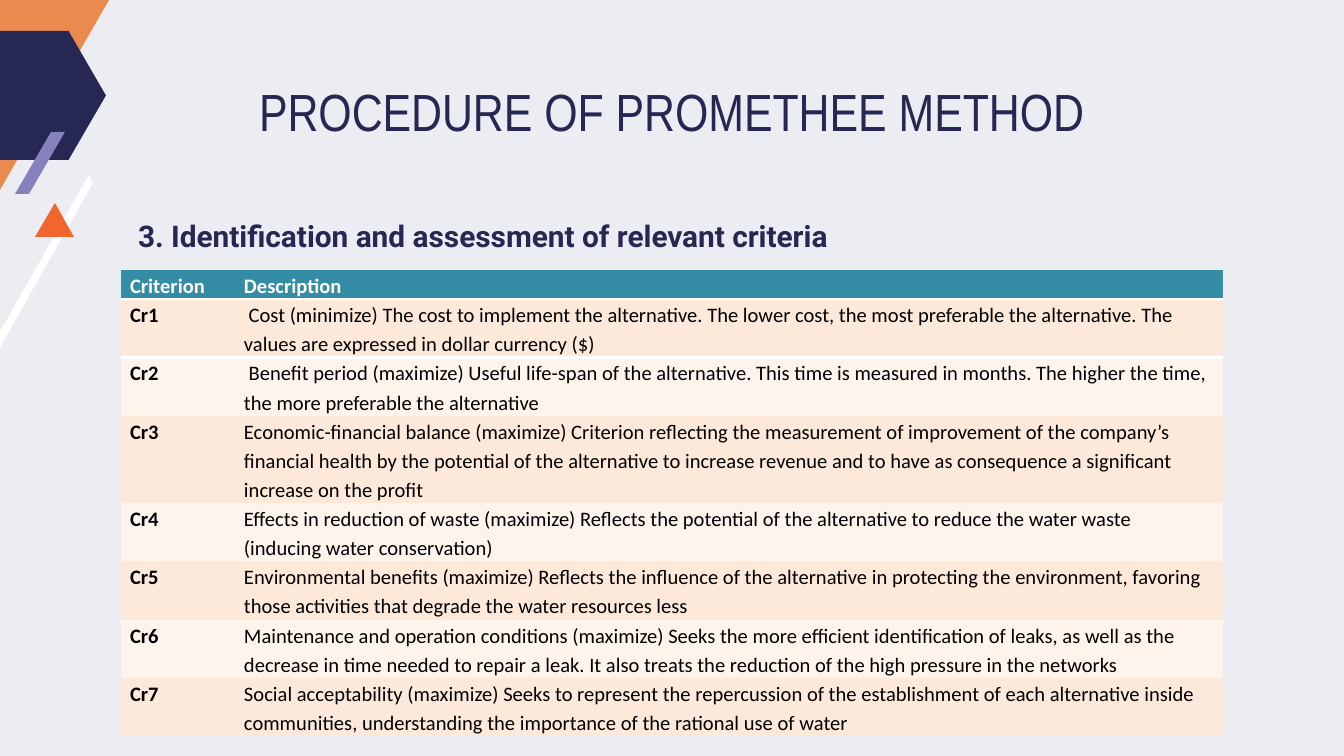
from lxml import etree
from pptx import Presentation
from pptx import util as u
from pptx.dml.color import RGBColor
from pptx.enum import shapes, text
from pptx.oxml import ns

SCALE = 914400 / 134.4
NAVY, WHITE, BLACK = "272753", "FFFFFF", "000000"
TEAL, PEACH, CREAM = "348DA5", "FDE9D9", "FEF4EC"
PLAIN = "{2D5ABB26-0587-4C30-8999-92F81FD0307C}"
LINE = 29

ROWS = [
    (1, "Criterion", "Description"),
    (2, "Cr1", " Cost (minimize) The cost to implement the alternative. The lower cost, "
     "the most preferable the alternative. The values are expressed in dollar currency ($)"),
    (2, "Cr2", " Benefit period (maximize) Useful life-span of the alternative. This time is "
     "measured in months. The higher the time, the more preferable the alternative"),
    (3, "Cr3", "Economic-financial balance (maximize) Criterion reflecting the measurement of "
     "improvement of the company’s financial health by the potential of the alternative to "
     "increase revenue and to have as consequence a significant increase on the profit"),
    (2, "Cr4", "Effects in reduction of waste (maximize) Reflects the potential of the "
     "alternative to reduce the water waste (inducing water conservation)"),
    (2, "Cr5", "Environmental benefits (maximize) Reflects the influence of the alternative in "
     "protecting the environment, favoring those activities that degrade the water resources less"),
    (2, "Cr6", "Maintenance and operation conditions (maximize) Seeks the more efficient "
     "identification of leaks, as well as the decrease in time needed to repair a leak. It also "
     "treats the reduction of the high pressure in the networks"),
    (2, "Cr7", "Social acceptability (maximize) Seeks to represent the repercussion of the "
     "establishment of each alternative inside communities, understanding the importance of the "
     "rational use of water"),
]


def px(n):
    return u.Emu(round(n * SCALE))


def paint(fill, color):
    fill.solid()
    fill.fore_color.rgb = RGBColor.from_string(color)


class Deck:
    def __init__(self, slide):
        self.slide = slide

    def finish(self, shape, color):
        paint(shape.fill, color)
        shape.line.fill.background()
        shape.shadow.inherit = False
        return shape

    def free(self, points, color):
        pen = self.slide.shapes.build_freeform(*points[0], scale=SCALE)
        pen.add_line_segments(points[1:], close=True)
        return self.finish(pen.convert_to_shape(), color)

    def hexagon(self, box, color):
        shape = self.slide.shapes.add_shape(shapes.MSO_SHAPE.HEXAGON, *map(px, box))
        shape.adjustments[0] = 0.29
        return self.finish(shape, color)

    def run(self, para, words, font, size, color, bold=False):
        run = para.add_run()
        run.text = words
        run.font.name = font
        run.font.size = u.Pt(size)
        run.font.bold = bold
        run.font.color.rgb = RGBColor.from_string(color)

    def holder(self, index, box):
        shape = self.slide.placeholders[index]
        shape.left, shape.top, shape.width, shape.height = map(px, box)
        frame = shape.text_frame
        frame.word_wrap = True
        frame.auto_size = text.MSO_AUTO_SIZE.NONE
        frame.margin_left = frame.margin_right = px(13)
        frame.margin_top = frame.margin_bottom = px(13)
        frame.vertical_anchor = text.MSO_ANCHOR.TOP
        return frame.paragraphs[0]

    def title(self, words, box):
        para = self.holder(0, box)
        para.alignment = text.PP_ALIGN.CENTER
        self.run(para, words, "Arial Narrow", 28, NAVY)

    def body(self, words, box):
        para = self.holder(1, box)
        props = para._p.get_or_add_pPr()
        props.set("marL", str(px(23)))
        props.set("indent", "0")
        etree.SubElement(props, ns.qn("a:buNone"))
        para.line_spacing = 1.15
        para.space_before = u.Pt(0)
        self.run(para, words, "Roboto", 16, NAVY, True)

    def border(self, cell, side):
        props = cell._tc.get_or_add_tcPr()
        line = etree.Element(ns.qn(f"a:ln{side}"), w=str(u.Pt(1.5)))
        fill = etree.SubElement(line, ns.qn("a:solidFill"))
        etree.SubElement(fill, ns.qn("a:srgbClr"), val=WHITE)
        props.insert(0, line)

    def cell(self, cell, words, color, fill, bold):
        cell.margin_left = cell.margin_right = px(9)
        cell.margin_top = cell.margin_bottom = 0
        paint(cell.fill, fill)
        para = cell.text_frame.paragraphs[0]
        para.line_spacing = 1.15
        self.run(para, words, "Calibri", 11, color, bold)

    def table(self, rows, left, top, widths):
        high = sum(row[0] for row in rows) * LINE
        frame = self.slide.shapes.add_table(
            len(rows), len(widths), px(left), px(top), px(sum(widths)), px(high))
        table = frame.table
        table._tbl.find(".//" + ns.qn("a:tableStyleId")).text = PLAIN
        for col, width in zip(table.columns, widths):
            col.width = px(width)
        for i, (lines, *words) in enumerate(rows):
            table.rows[i].height = px(lines * LINE)
            head = i == 0
            fill = TEAL if head else PEACH if i % 2 else CREAM
            for j, word in enumerate(words):
                cell = table.cell(i, j)
                self.cell(cell, word, WHITE if head else BLACK, fill, head or j == 0)
                if i < 2:
                    self.border(cell, "B" if head else "T")


def main():
    prs = Presentation()
    prs.slide_width, prs.slide_height = px(1344), px(756)
    slide = prs.slides.add_slide(prs.slide_layouts[1])
    paint(slide.background.fill, "ECEDF3")
    deck = Deck(slide)
    deck.free([(0, 0), (109, 0), (0, 190)], "EA8A4F")
    deck.free([(-12, 353), (89, 175), (93, 183), (-8, 362)], WHITE)
    deck.free([(35, 237), (74, 237), (55, 203)], "F1662D")
    deck.hexagon((-39, 31, 145, 129), NAVY)
    deck.free([(51, 132), (65, 132), (29, 194), (15, 194)], "8680BC")
    deck.body("3. Identification and assessment of relevant criteria", (102, 199, 1164, 52))
    deck.title("PROCEDURE OF PROMETHEE METHOD", (171, 66, 1001, 85))
    deck.table(ROWS, 121, 270, (114, 988))
    prs.save("out.pptx")


if __name__ == "__main__":
    main()
